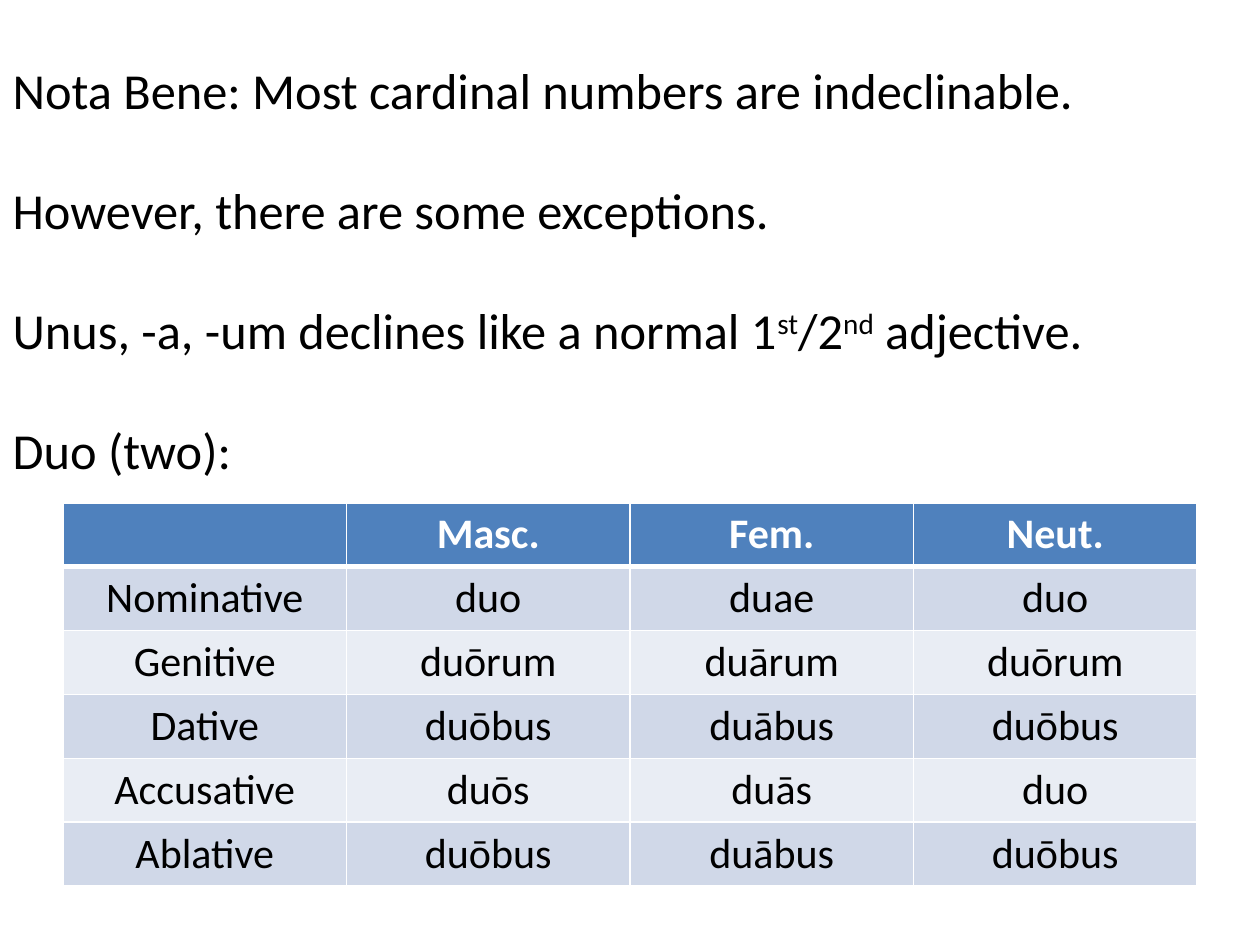
import dataclasses

import pptx
import pptx.dml.color
import pptx.enum.text
import pptx.oxml
import pptx.oxml.ns
import pptx.util


@dataclasses.dataclass(frozen=True)
class Theme:
    font: str = "Calibri"
    title_size: float = 28.8
    title_gap: float = 34
    table_size: float = 24
    text: str = "000000"
    header_text: str = "FFFFFF"
    header_fill: str = "4F81BD"
    band_fills: tuple = ("D0D8E8", "E9EDF4")
    border: str = "FFFFFF"
    thin: float = 1
    thick: float = 3


THEME = Theme()
SLIDE_WIDTH = pptx.util.Inches(10)
SLIDE_HEIGHT = pptx.util.Inches(7.5)

# Each statement is a list of (text, is superscript) pieces.
STATEMENTS = [
    [("Nota Bene: Most cardinal numbers are indeclinable.", False)],
    [("However, there are some exceptions.", False)],
    [("Unus, -a, -um declines like a normal 1", False), ("st", True),
     ("/2", False), ("nd", True), (" adjective.", False)],
    [("Duo (two):", False)],
]
DECLENSION = [
    ["", "Masc.", "Fem.", "Neut."],
    ["Nominative", "duo", "duae", "duo"],
    ["Genitive", "duōrum", "duārum", "duōrum"],
    ["Dative", "duōbus", "duābus", "duōbus"],
    ["Accusative", "duōs", "duās", "duo"],
    ["Ablative", "duōbus", "duābus", "duōbus"],
]


def area(left, top, width, height):
    """Turn shares of the slide's size into lengths."""
    return (int(left * SLIDE_WIDTH), int(top * SLIDE_HEIGHT),
            int(width * SLIDE_WIDTH), int(height * SLIDE_HEIGHT))


def style_font(font, size, color, bold=False):
    font.name = THEME.font
    font.size = pptx.util.Pt(size)
    font.bold = bold
    font.color.rgb = pptx.dml.color.RGBColor.from_string(color)


def write_title(title, statements):
    title.left, title.top, title.width, title.height = area(0, 0.04, 1, 0.49)
    frame = title.text_frame
    frame.word_wrap = True
    frame.auto_size = pptx.enum.text.MSO_AUTO_SIZE.NONE
    frame.vertical_anchor = pptx.enum.text.MSO_ANCHOR.MIDDLE
    for index, statement in enumerate(statements):
        paragraph = frame.add_paragraph() if index else frame.paragraphs[0]
        paragraph.alignment = pptx.enum.text.PP_ALIGN.LEFT
        style_font(paragraph.font, THEME.title_size, THEME.text)
        if index < len(statements) - 1:
            paragraph.space_after = pptx.util.Pt(THEME.title_gap)
        for text, superscript in statement:
            run = paragraph.add_run()
            run.text = text
            if superscript:
                run._r.get_or_add_rPr().set("baseline", "30000")


def add_borders(cell, top, bottom):
    """Draw all four borders; call before the fill, which must follow them."""
    widths = {"L": THEME.thin, "R": THEME.thin, "T": top, "B": bottom}
    properties = cell._tc.get_or_add_tcPr()
    for side, width in widths.items():
        properties.append(pptx.oxml.parse_xml(
            f'<a:ln{side} {pptx.oxml.ns.nsdecls("a")} w="{pptx.util.Pt(width)}">'
            f'<a:solidFill><a:srgbClr val="{THEME.border}"/></a:solidFill>'
            f'</a:ln{side}>'))


def format_cell(cell, text, row):
    is_header = row == 0
    add_borders(cell,
                top=THEME.thick if row == 1 else THEME.thin,
                bottom=THEME.thick if is_header else THEME.thin)
    fill = THEME.header_fill if is_header else THEME.band_fills[(row - 1) % 2]
    cell.fill.solid()
    cell.fill.fore_color.rgb = pptx.dml.color.RGBColor.from_string(fill)
    cell.text = text
    paragraph = cell.text_frame.paragraphs[0]
    paragraph.alignment = pptx.enum.text.PP_ALIGN.CENTER
    style_font(paragraph.font, THEME.table_size,
               THEME.header_text if is_header else THEME.text, bold=is_header)


def add_declension_table(slide, declension):
    table = slide.shapes.add_table(
        len(declension), len(declension[0]),
        *area(0.05, 0.532, 0.9, 0.4)).table
    for row, forms in enumerate(declension):
        for column, form in enumerate(forms):
            format_cell(table.cell(row, column), form, row)


def main():
    presentation = pptx.Presentation()
    presentation.slide_width = SLIDE_WIDTH
    presentation.slide_height = SLIDE_HEIGHT
    title_only = presentation.slide_layouts[5]
    slide = presentation.slides.add_slide(title_only)
    write_title(slide.shapes.title, STATEMENTS)
    add_declension_table(slide, DECLENSION)
    presentation.save("out.pptx")


if __name__ == "__main__":
    main()
